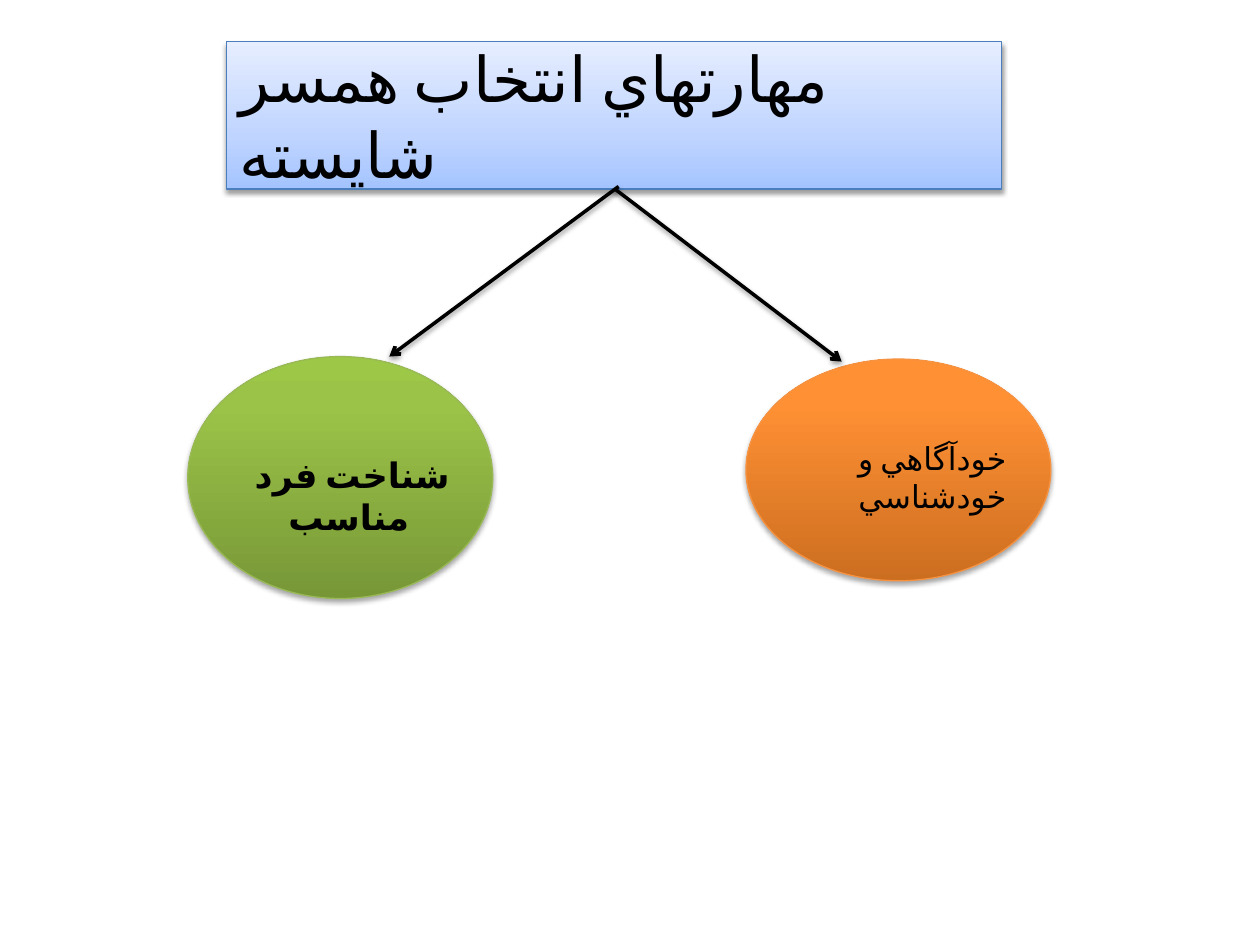
from lxml import etree
from pptx import Presentation
from pptx.dml.color import RGBColor
from pptx.enum.lang import MSO_LANGUAGE_ID
from pptx.enum.shapes import MSO_CONNECTOR, MSO_SHAPE
from pptx.enum.text import MSO_ANCHOR, MSO_AUTO_SIZE, PP_ALIGN
from pptx.oxml.ns import qn
from pptx.util import Pt

RECT, OVAL, STRAIGHT = MSO_SHAPE.RECTANGLE, MSO_SHAPE.OVAL, MSO_CONNECTOR.STRAIGHT
MIDDLE, TOP = MSO_ANCHOR.MIDDLE, MSO_ANCHOR.TOP
LEFT, CENTER = PP_ALIGN.LEFT, PP_ALIGN.CENTER
GROW = MSO_AUTO_SIZE.SHAPE_TO_FIT_TEXT
PERSIAN = MSO_LANGUAGE_ID.FARSI

THEME = {
    "font": "Calibri", "ink": "000000", "title": 36, "strong": 20, "body": 18,
    "outline": 0.75, "arrow": 2,
    # gradient stops run from bottom to top
    "blue": {"stops": [(0, "A4C4FF"), (35, "BFD4FF"), (100, "E6EEFF")], "line": "4B7EBC"},
    "orange": {"stops": [(0, "CC6E20"), (80, "FF9034"), (100, "FF9136")], "line": "F69240"},
    "green": {"stops": [(0, "779737"), (80, "9BC348"), (100, "9DC746")], "line": "98B955"},
    # opacity %, blur, distance
    "soft": (38, 3.1, 1.6), "deep": (35, 3.1, 1.8),
}

# Content: runs are (text, size, bold); boxes are left, top, width, height in points
TITLE = {"box": (129.6, 23.76, 442.8, 84.24),
         "runs": [("مهارتهاي انتخاب همسر شايسته", "title", False)]}
SELF_KNOWLEDGE = {
    "oval": (426.24, 205.2, 174.24, 126.72), "colour": "orange",
    "label": (444.24, 203.76, 177.12, 72.72), "inset_top": 47,
    "runs": [("خودآگاهي و خودشناسي", "body", False)]}
PARTNER_KNOWLEDGE = {
    "oval": (107.28, 203.76, 174.24, 138.24), "colour": "green",
    "label": (132.48, 255.6, 137.52, 55.44), "inset_top": 3.6,
    "runs": [("شناخت فرد مناسب", "strong", True), (" ", "body", False)]}
ARROWS = [((351.36, 108), (480.96, 206.64)), ((353.52, 106.56), (222.48, 203.76))]


def points(values):
    return [Pt(value) for value in values]


def add_shadow(item, kind):
    opacity, blur, distance = THEME[kind]
    properties = item._element.spPr
    effects = properties.find(qn("a:effectLst"))
    if effects is None:
        effects = etree.SubElement(properties, qn("a:effectLst"))
    shadow = etree.SubElement(effects, qn("a:outerShdw"), blurRad=str(Pt(blur)),
                              dist=str(Pt(distance)), dir="5400000", rotWithShape="0")
    colour = etree.SubElement(shadow, qn("a:srgbClr"), val=THEME["ink"])
    etree.SubElement(colour, qn("a:alpha"), val=str(opacity * 1000))


def add_panel(shapes, kind, box, colour, shadow):
    panel = shapes.add_shape(kind, *points(box))
    panel.shadow.inherit = False
    panel.fill.gradient()
    panel.fill.gradient_angle = 90
    stops = panel._element.spPr.find(qn("a:gradFill")).find(qn("a:gsLst"))
    for stop in list(stops):
        stops.remove(stop)
    for position, value in THEME[colour]["stops"]:
        stop = etree.SubElement(stops, qn("a:gs"), pos=str(position * 1000))
        etree.SubElement(stop, qn("a:srgbClr"), val=value)
    panel.line.color.rgb = RGBColor.from_string(THEME[colour]["line"])
    panel.line.width = Pt(THEME["outline"])
    add_shadow(panel, shadow)
    return panel


def write(shape, runs, align, anchor):
    frame = shape.text_frame
    frame.word_wrap = True
    frame.vertical_anchor = anchor
    para = frame.paragraphs[0]
    para.alignment = align
    for text, size, bold in runs:
        span = para.add_run()
        span.text = text
        span.font.name = THEME["font"]
        span.font.size = Pt(THEME[size])
        span.font.bold = bold
        span.font.language_id = PERSIAN
        span.font.color.rgb = RGBColor.from_string(THEME["ink"])
        # Arabic script takes its typeface from the complex-script entry
        etree.SubElement(span._r.rPr, qn("a:cs"), typeface=THEME["font"])


def add_skill(page, skill):
    group = page.shapes.add_group_shape()
    add_panel(group.shapes, OVAL, skill["oval"], skill["colour"], "deep")
    label = group.shapes.add_textbox(*points(skill["label"]))
    write(label, skill["runs"], CENTER, TOP)
    label.text_frame.margin_top = Pt(skill["inset_top"])
    label.text_frame.auto_size = GROW


def add_arrow(page, start, end):
    arrow = page.shapes.add_connector(STRAIGHT, *points(start + end))
    arrow.line.color.rgb = RGBColor.from_string(THEME["ink"])
    arrow.line.width = Pt(THEME["arrow"])
    etree.SubElement(arrow._element.spPr.find(qn("a:ln")), qn("a:tailEnd"), type="arrow")
    add_shadow(arrow, "soft")


def main():
    deck = Presentation()
    deck.slide_width, deck.slide_height = Pt(720), Pt(540)
    page = deck.slides.add_slide(deck.slide_layouts[6])

    # Title panel
    title = add_panel(page.shapes, RECT, TITLE["box"], "blue", "soft")
    write(title, TITLE["runs"], LEFT, MIDDLE)

    # Skills and the arrows leading to them
    add_skill(page, SELF_KNOWLEDGE)
    for start, end in ARROWS:
        add_arrow(page, start, end)
    add_skill(page, PARTNER_KNOWLEDGE)

    deck.save("out.pptx")


if __name__ == "__main__":
    main()
